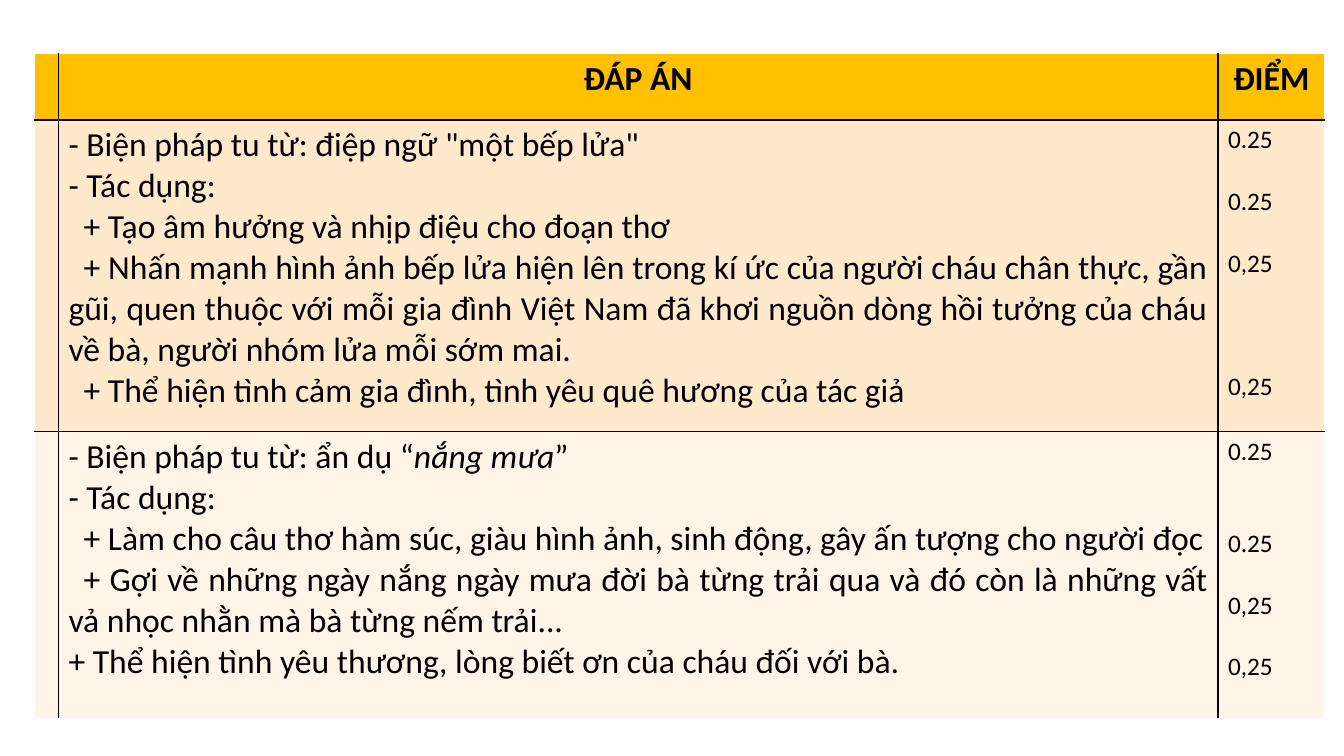
"""Build a slide with an answer key table: answers and their points."""
from lxml.etree import SubElement
from pptx import Presentation
from pptx.dml.color import RGBColor
from pptx.enum.text import PP_ALIGN
from pptx.oxml.ns import qn
from pptx.util import Inches, Pt

HEAD = ["", "ĐÁP ÁN", "ĐIỂM"]
ANSWERS = [
    [
        ("left", 0, ['- Biện pháp tu từ: điệp ngữ "một bếp lửa"']),
        ("left", 0, ["- Tác dụng:"]),
        ("left", 1, ["+ Tạo âm hưởng và nhịp điệu cho đoạn thơ"]),
        ("just", 1, ["+ Nhấn mạnh hình ảnh bếp lửa hiện lên trong kí ức của người cháu "
                     "chân thực, gần gũi, quen thuộc với mỗi gia đình Việt Nam đã khơi nguồn "
                     "dòng hồi tưởng của cháu về bà, người nhóm lửa mỗi sớm mai."]),
        ("left", 1, ["+ Thể hiện tình cảm gia đình, tình yêu quê hương của tác giả"]),
    ],
    [
        ("left", 0, ["- Biện pháp tu từ: ẩn dụ “", "nắng mưa", "”"]),
        ("left", 0, ["- Tác dụng:"]),
        ("just", 1, ["+ Làm cho câu thơ hàm súc, giàu hình ảnh, sinh động, "
                     "gây ấn tượng cho người đọc"]),
        ("just", 1, ["+ Gợi về những ngày nắng ngày mưa đời bà từng trải qua và đó còn là "
                     "những vất vả nhọc nhằn mà bà từng nếm trải..."]),
        ("just", 0, ["+ Thể hiện tình yêu thương, lòng biết ơn của cháu đối với bà."]),
    ],
]
POINTS = [
    [("0.25", 0), ("0.25", 1), ("0,25", 1), ("0,25", 3)],
    [("0.25", 0), ("0.25", 2), ("0,25", 1), ("0,25", 1)],
]
COLS = [0.23, 11.5, 1.06]
ROWS = [0.66, 3.09, 2.85]
LEFT, TOP = 0.34, 0.53
THEME = {
    "font": "Calibri", "ink": "000000", "edge": "FFFFFF",
    "fills": ["FFC000", "FFE8CC", "FFF4E7"],
    "big": 24, "small": 18, "line": 22, "indent": 0.15,
}
ALIGN = {"left": PP_ALIGN.LEFT, "just": PP_ALIGN.JUSTIFY, "mid": PP_ALIGN.CENTER}


def write(cell, parts, size=THEME["big"], bold=False, align="left", indent=0, gap=0, first=True):
    """Add one paragraph; every second run is italic."""
    frame = cell.text_frame
    para = frame.paragraphs[0] if first else frame.add_paragraph()
    para.alignment = ALIGN[align]
    para.space_before = Pt(gap * THEME["line"])
    if indent:
        para._p.get_or_add_pPr().set("indent", str(Inches(indent * THEME["indent"])))
    for i, part in enumerate(parts):
        run = para.add_run()
        run.text = part
        font = run.font
        font.name, font.size, font.bold = THEME["font"], Pt(size), bold
        font.italic = i % 2 == 1
        font.color.rgb = RGBColor.from_string(THEME["ink"])


def frame_cell(cell, row, col):
    """Draw black inner borders and white outer ones, then the fill."""
    outer = {"L": col == 0, "R": col == len(COLS) - 1, "T": row == 0, "B": row == len(ROWS) - 1}
    props = cell._tc.get_or_add_tcPr()
    for side, out in outer.items():
        line = SubElement(props, qn(f"a:ln{side}"), w=str(Pt(1)))
        solid = SubElement(line, qn("a:solidFill"))
        SubElement(solid, qn("a:srgbClr"), val=THEME["edge" if out else "ink"])
    cell.fill.solid()
    cell.fill.fore_color.rgb = RGBColor.from_string(THEME["fills"][row])


def main():
    """Make the slide and save it."""
    deck = Presentation()
    deck.slide_width, deck.slide_height = Inches(13.33), Inches(7.5)
    slide = deck.slides.add_slide(deck.slide_layouts[6])
    table = slide.shapes.add_table(len(ROWS), len(COLS), Inches(LEFT), Inches(TOP),
                                   Inches(sum(COLS)), Inches(sum(ROWS))).table
    for col, width in zip(table.columns, COLS):
        col.width = Inches(width)
    for row, height in zip(table.rows, ROWS):
        row.height = Inches(height)
    for r in range(len(ROWS)):
        for c in range(len(COLS)):
            frame_cell(table.cell(r, c), r, c)
    for c, title in enumerate(HEAD):
        if title:
            write(table.cell(0, c), [title], bold=True, align="mid")
    for r, (answer, marks) in enumerate(zip(ANSWERS, POINTS), 1):
        for i, (align, indent, parts) in enumerate(answer):
            write(table.cell(r, 1), parts, align=align, indent=indent, first=i == 0)
        for i, (mark, gap) in enumerate(marks):
            write(table.cell(r, 2), [mark], size=THEME["small"], gap=gap, first=i == 0)
    deck.save("out.pptx")


if __name__ == "__main__":
    main()
